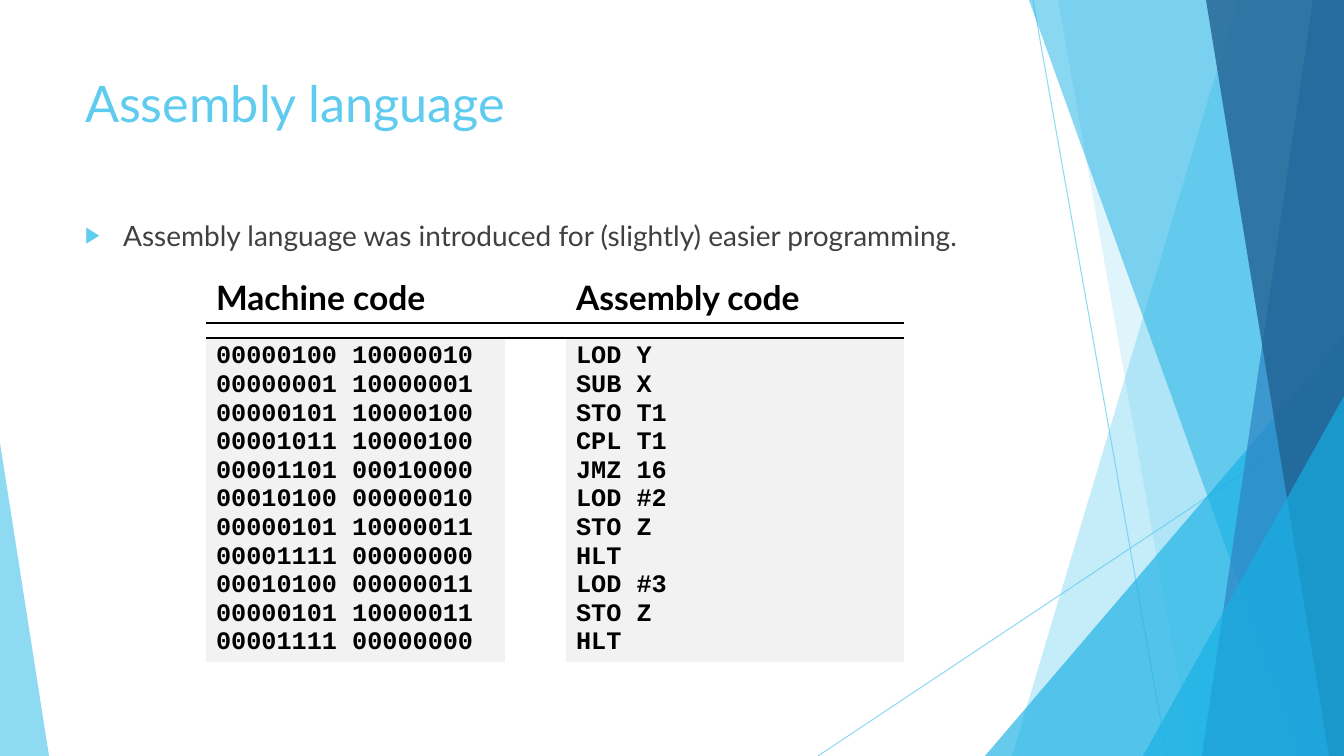
from lxml import etree
from pptx import Presentation
from pptx import util as u
from pptx.dml import color
from pptx.enum import shapes, text
from pptx.oxml import ns

PX = 914400 / 100.8
SKY, CYAN, BLUE, NAVY = "5FCBEF", "17B0E4", "2E83C3", "226292"
BLACK, GREY, PALE = "000000", "404040", "F2F2F2"

RAYS = [((1033, 0), (1167, 756)), ((1344, 406), (818, 756))]
BACK_BANDS = [(1238, 1012, SKY, 36), (1058, 1192, SKY, 20)]
FRONT_BANDS = [(1029, 1301, CYAN, 50), (1313, 1202, BLUE, 70), (1206, 1329, NAVY, 80)]

MACHINE_CODE = [
    "00000100 10000010", "00000001 10000001", "00000101 10000100",
    "00001011 10000100", "00001101 00010000", "00010100 00000010",
    "00000101 10000011", "00001111 00000000", "00010100 00000011",
    "00000101 10000011", "00001111 00000000",
]
ASSEMBLY_CODE = [
    "LOD Y", "SUB X", "STO T1", "CPL T1", "JMZ 16", "LOD #2",
    "STO Z", "HLT", "LOD #3", "STO Z", "HLT",
]


def px(length):
    return u.Emu(round(length * PX))


def rgb(value):
    return color.RGBColor.from_string(value)


def child(parent, tag, **attributes):
    return etree.SubElement(parent, ns.qn(tag), attributes)


def set_alpha(element, percent):
    for node in element.iter(ns.qn("a:srgbClr")):
        child(node, "a:alpha", val=str(percent * 1000))


def paint(shape, fill, alpha):
    shape.shadow.inherit = False
    shape.fill.solid()
    shape.fill.fore_color.rgb = rgb(fill)
    shape.line.fill.background()
    set_alpha(shape.element.spPr, alpha)


def add_ray(page, start, end):
    ray = page.shapes.add_connector(
        shapes.MSO_CONNECTOR.STRAIGHT, *map(px, start + end))
    ray.line.color.rgb = rgb(SKY)
    ray.line.width = u.Pt(0.75)
    set_alpha(ray.element.spPr, 70)
    child(ray.element.spPr, "a:effectLst")


def add_band(page, top_x, bottom_x, fill, alpha):
    builder = page.shapes.build_freeform(top_x, 0, scale=PX)
    builder.add_line_segments([(1344, 0), (1344, 756), (bottom_x, 756)])
    paint(builder.convert_to_shape(), fill, alpha)


def add_triangle(page, left, top, width, apex, fill, alpha):
    triangle = page.shapes.add_shape(
        shapes.MSO_SHAPE.ISOSCELES_TRIANGLE,
        px(left), px(top), px(width), px(756 - top))
    triangle.adjustments[0] = apex
    paint(triangle, fill, alpha)


def write(frame, content, font="Lato", size=18, fill=BLACK, bold=False):
    lines = content if isinstance(content, list) else [content]
    for index, line in enumerate(lines):
        para = frame.add_paragraph() if index else frame.paragraphs[0]
        para.alignment = text.PP_ALIGN.LEFT
        span = para.add_run()
        span.text = line
        span.font.name = font
        span.font.size = u.Pt(size)
        span.font.bold = bold
        span.font.color.rgb = rgb(fill)


def fill_placeholder(box, content, top, height, **format):
    box.left, box.top, box.width, box.height = map(px, (75, top, 947, height))
    frame = box.text_frame
    frame.auto_size = text.MSO_AUTO_SIZE.NONE
    frame.vertical_anchor = text.MSO_ANCHOR.TOP
    write(frame, content, **format)
    box.element.getparent().append(box.element)


def add_bullet(para):
    para.space_before = u.Pt(10)
    properties = para._p.get_or_add_pPr()
    properties.set("marL", str(px(38)))
    properties.set("indent", str(px(-38)))
    child(child(properties, "a:buClr"), "a:srgbClr", val=SKY)
    child(properties, "a:buSzPct", val="80000")
    child(properties, "a:buChar", char="▶")


def set_borders(cell, drawn):
    properties = cell._tc.get_or_add_tcPr()
    for side in "LRTB":
        if side in drawn:
            line = child(properties, f"a:ln{side}", w=str(u.Pt(1)))
            child(child(line, "a:solidFill"), "a:srgbClr", val=BLACK)
        else:
            child(child(properties, f"a:ln{side}", w="0"), "a:noFill")


def add_code_table(page):
    widths, heights, borders = (299, 61, 338), (51, 15, 324), ("B", "TB", "T")
    table = page.shapes.add_table(
        3, 3, px(206), px(272), px(sum(widths)), px(sum(heights))).table
    for column, width in zip(table.columns, widths):
        column.width = px(width)
    for row, height, drawn in zip(table.rows, heights, borders):
        row.height = px(height)
        for cell in row.cells:
            set_borders(cell, drawn)
            cell.fill.background()
    for row in (0, 1, 2):
        for column in (0, 1, 2):
            if row == 1 or column == 1:
                cell = table.cell(row, column)
                cell.margin_top = cell.margin_bottom = 0
                child(cell.text_frame.paragraphs[0]._p, "a:endParaRPr", sz="300")
    code_columns = [(0, "Machine code", MACHINE_CODE), (2, "Assembly code", ASSEMBLY_CODE)]
    for column, heading, code in code_columns:
        write(table.cell(0, column).text_frame, heading, size=24, bold=True)
        listing = table.cell(2, column)
        listing.fill.solid()
        listing.fill.fore_color.rgb = rgb(PALE)
        write(listing.text_frame, code, font="Courier New", bold=True)


def main():
    deck = Presentation()
    deck.slide_width, deck.slide_height = px(1344), px(756)
    page = deck.slides.add_slide(deck.slide_layouts[1])
    title, body = page.placeholders
    for start, end in RAYS:
        add_ray(page, start, end)
    for band in BACK_BANDS:
        add_band(page, *band)
    add_triangle(page, 985, 336, 359, 1, CYAN, 66)
    for band in FRONT_BANDS:
        add_band(page, *band)
    add_triangle(page, 1143, 396, 201, 1, CYAN, 66)
    add_triangle(page, 0, 443, 49, 0, SKY, 70)
    fill_placeholder(title, "Assembly language", 67, 145, size=36, fill=SKY)
    fill_placeholder(
        body, "Assembly language was introduced for (slightly) easier programming.",
        213, 454, size=20, fill=GREY)
    add_bullet(body.text_frame.paragraphs[0])
    add_code_table(page)
    deck.save("out.pptx")


if __name__ == "__main__":
    main()
